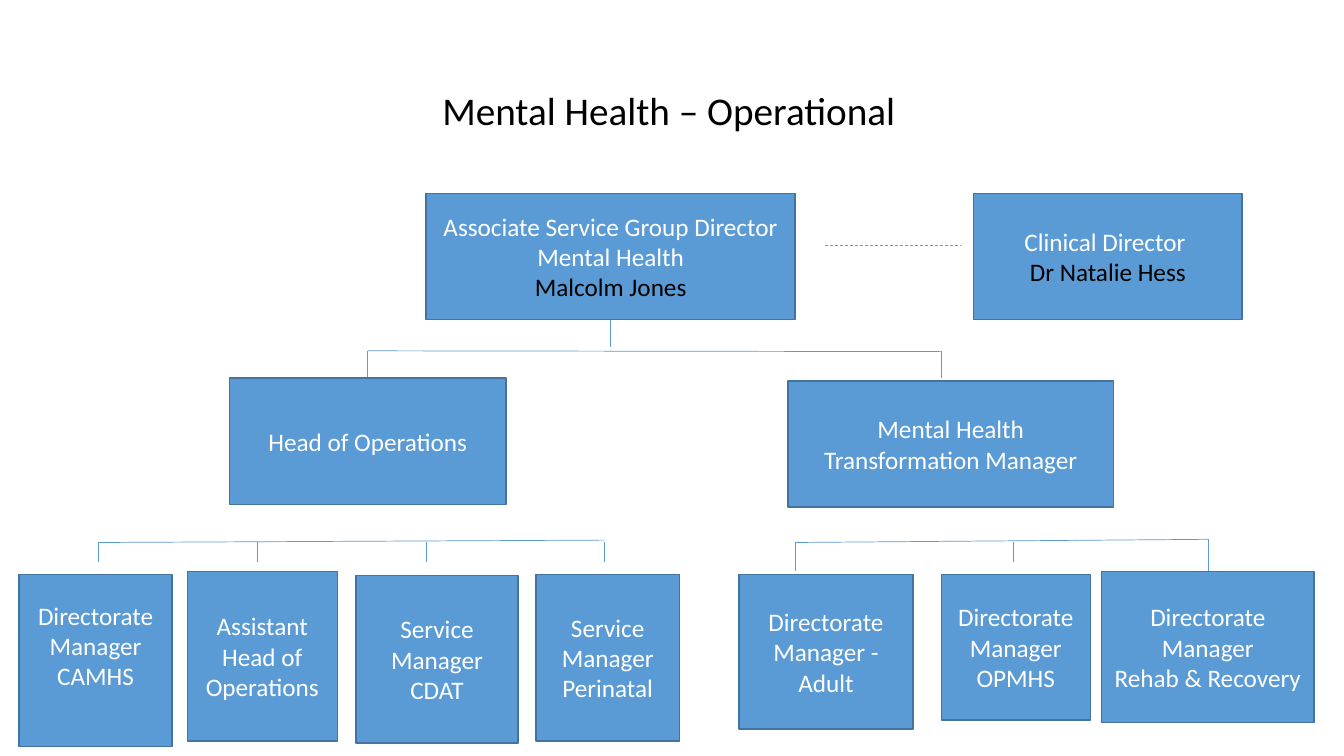
import pptx
import pptx.dml.color
import pptx.enum.dml
import pptx.enum.shapes
import pptx.enum.text
import pptx.util

Cm = pptx.util.Cm
Pt = pptx.util.Pt
MID = pptx.enum.text.MSO_ANCHOR.MIDDLE
TOP = pptx.enum.text.MSO_ANCHOR.TOP


def tint(code):
    """Turn a hex string into a colour."""
    return pptx.dml.color.RGBColor.from_string(code)


def write(frame, rows, size=18, color="FFFFFF", font="Calibri", anchor=MID, name=None, foot=0.13):
    """Fill a text frame with centred rows; name is a last row in black."""
    frame.word_wrap = True
    frame.vertical_anchor = anchor
    frame.margin_bottom = Cm(foot)
    pairs = [(row, color) for row in rows]
    if name:
        pairs.append((name, "000000"))
    for i, (row, shade) in enumerate(pairs):
        para = frame.paragraphs[0] if i == 0 else frame.add_paragraph()
        para.alignment = pptx.enum.text.PP_ALIGN.CENTER
        para.text = row
        for run in para.runs:
            run.font.size = Pt(size)
            run.font.name = font
            run.font.color.rgb = tint(shade)


class Chart:
    fill, edge, link = "5B9BD5", "43739E", "5B9BD5"

    def __init__(self, deck):
        self.slide = deck.slides.add_slide(deck.slide_layouts[6])

    def title(self, text, *area):
        box = self.slide.shapes.add_textbox(*map(Cm, area))
        write(box.text_frame, [text], size=28, color="000000", anchor=TOP)

    def box(self, area, rows, **style):
        shape = self.slide.shapes.add_shape(
            pptx.enum.shapes.MSO_SHAPE.RECTANGLE, *map(Cm, area))
        shape.shadow.inherit = False
        shape.fill.solid()
        shape.fill.fore_color.rgb = tint(self.fill)
        shape.line.color.rgb = tint(self.edge)
        shape.line.width = Pt(1)
        write(shape.text_frame, rows, **style)

    def line(self, *ends, dash=False):
        wire = self.slide.shapes.add_connector(
            pptx.enum.shapes.MSO_CONNECTOR.STRAIGHT, *map(Cm, ends))
        wire.line.color.rgb = tint(self.link)
        wire.line.width = Pt(0.5)
        if dash:
            wire.line.dash_style = pptx.enum.dml.MSO_LINE.DASH
        props = wire._element.spPr
        props.append(props.makeelement(pptx.oxml.ns.qn("a:effectLst"), {}))

    def branch(self, left, right, drops):
        """Draw a bar between two points and a drop (x, top, bottom) for each child."""
        self.line(*left, *right)
        for x, top, low in drops:
            self.line(x, top, x, low)


def main():
    deck = pptx.Presentation()
    deck.slide_width, deck.slide_height = Cm(33.87), Cm(19.05)
    chart = Chart(deck)
    chart.title("Mental Health – Operational ", 2.64, 2.06, 28.65, 1.45)

    # Links between levels
    chart.line(15.39, 7.67, 15.39, 8.74)
    chart.line(20.8, 6.17, 24.21, 6.17, dash=True)
    chart.branch((9.27, 8.84), (23.72, 8.86),
                 [(x, 8.84, 9.53) for x in (9.27, 23.72)])
    chart.branch((2.49, 13.67), (15.24, 13.61),
                 [(x, 13.67, 14.17) for x in (2.49, 6.48, 10.74, 15.24)])
    chart.branch((20.04, 13.67), (30.45, 13.59),
                 [(20.04, 13.67, 14.4), (25.55, 13.67, 14.17), (30.45, 13.59, 14.4)])

    # Directors and heads
    high = 3.18
    chart.box((10.74, 4.88, 9.3, high),
              ["Associate Service Group Director", "Mental Health"], name="Malcolm Jones")
    chart.box((24.54, 4.88, 6.76, high), ["Clinical Director "], name="Dr Natalie Hess")
    chart.box((5.79, 9.53, 6.96, high), ["Head of Operations"])
    chart.box((19.86, 9.6, 8.2, high), ["Mental Health\vTransformation Manager"])

    # Managers; the first sits one text row higher in its box
    chart.box((0.48, 14.48, 3.86, 4.34), ["Directorate Manager", "CAMHS"], foot=0.9)
    team = [
        ((4.72, 14.4, 3.78, 4.27), ["Assistant Head of Operations"]),
        ((8.97, 14.5, 4.09, 4.22), ["Service Manager", "CDAT"]),
        ((13.51, 14.48, 3.61, 4.19), ["Service Manager Perinatal"]),
        ((18.62, 14.48, 4.39, 3.89), ["Directorate Manager - Adult"]),
        ((23.72, 14.48, 3.76, 3.66), ["Directorate Manager", "OPMHS"]),
        ((27.76, 14.4, 5.36, 3.81), ["Directorate Manager", "Rehab & Recovery"]),
    ]
    for area, rows in team:
        chart.box(area, rows)
    deck.save("out.pptx")


if __name__ == "__main__":
    main()
